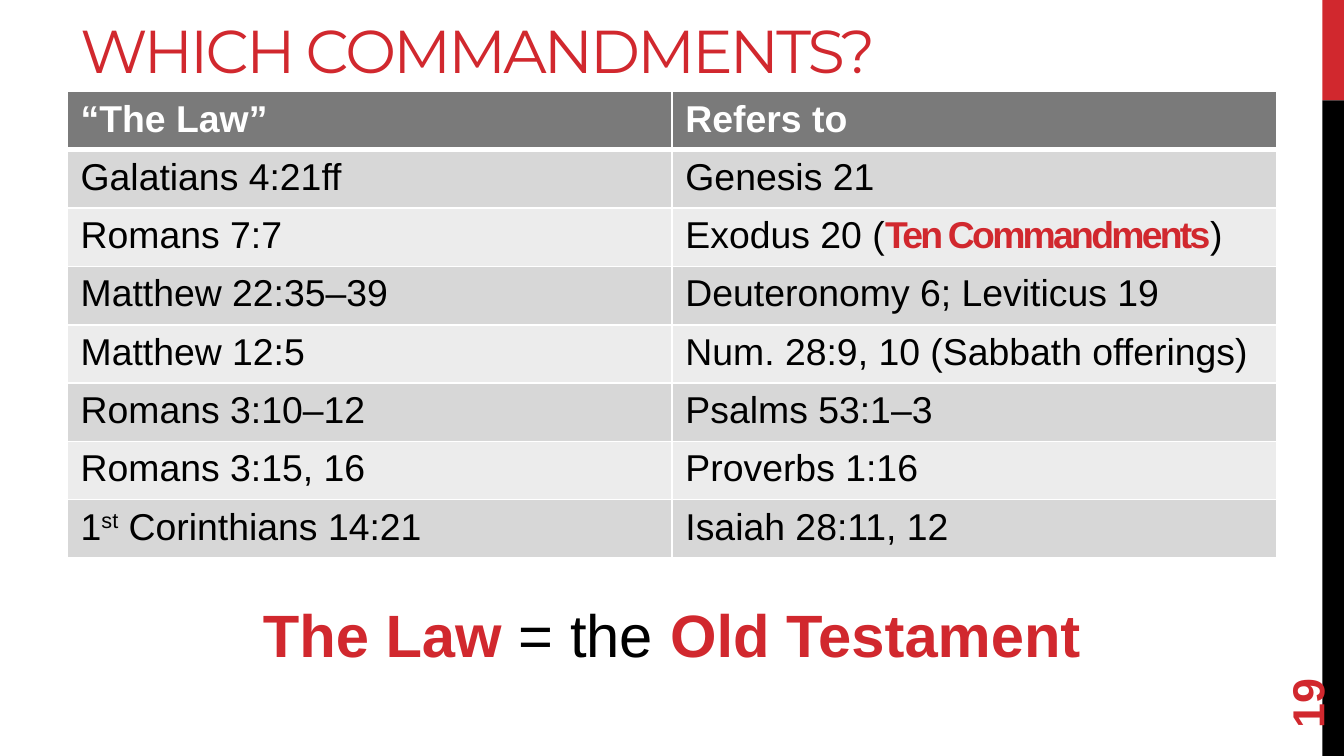
from lxml import etree
from pptx import Presentation
from pptx.dml.color import RGBColor
from pptx.enum import shapes, text
from pptx.oxml import ns
from pptx.util import Cm, Pt

THEME = dict(
    red="D1282E", black="000000", white="FFFFFF", head="7A7A7A",
    bands=("D7D7D7", "ECECEC"), title_font="Montserrat", font="Arial",
    title=32.4, cell=20, number=24, summary=32,
)
HOT = dict(bold=True, color=THEME["red"])

TITLE = "WHICH COMMANDMENTS?"
HEADER = ("“The Law”", "Refers to")
# A cell is plain text or a list of (text, format) runs.
ROWS = [
    ("Galatians 4:21ff", "Genesis 21"),
    ("Romans 7:7", [("Exodus 20 (", {}),
                    ("Ten Commandments", dict(HOT, spacing=-1.5)), (")", {})]),
    ("Matthew 22:35–39", "Deuteronomy 6; Leviticus 19"),
    ("Matthew 12:5", "Num.\u00a028:9, 10 (Sabbath offerings)"),
    ("Romans 3:10–12", "Psalms 53:1–3"),
    ("Romans 3:15, 16", "Proverbs 1:16"),
    ([("1", {}), ("st", dict(raised=30)), (" Corinthians 14:21", {})],
     "Isaiah 28:11, 12"),
]
SUMMARY = [("The Law ", HOT), ("= the ", {}), ("Old Testament", HOT)]
NUMBER = "19"

SLIDE_W, SLIDE_H = 25.4, 14.29
LEFT, WIDTH = 1.27, 22.86
TABLE_TOP, ROW_H = 1.73, 1.04
BAR_W, BAR_SPLIT = 0.41, 1.9


def rgb(key):
    return RGBColor.from_string(key)


def add_text(p, content, size, color=THEME["black"], font=THEME["font"],
             bold=False, spacing=0, raised=0):
    """Add one run; spacing is in points, raised in percent of the size."""
    r = p.add_run()
    r.text = content
    f = r.font
    f.name, f.size, f.bold = font, Pt(size), bold
    f.color.rgb = rgb(color)
    rPr = r._r.get_or_add_rPr()
    if spacing:
        rPr.set("spc", str(round(spacing * 100)))
    if raised:
        rPr.set("baseline", str(raised * 1000))


def add_runs(p, content, **base):
    for part, fmt in [(content, {})] if isinstance(content, str) else content:
        add_text(p, part, **{**base, **fmt})


def add_box(s, x, y, w, h, content, anchor=text.MSO_ANCHOR.TOP,
            align=text.PP_ALIGN.LEFT, **base):
    sp = s.shapes.add_textbox(Cm(x), Cm(y), Cm(w), Cm(h))
    tf = sp.text_frame
    tf.word_wrap = True
    tf.vertical_anchor = anchor
    tf.paragraphs[0].alignment = align
    add_runs(tf.paragraphs[0], content, **base)
    return sp


def add_bar(s, y, h, color):
    sp = s.shapes.add_shape(shapes.MSO_SHAPE.RECTANGLE, Cm(SLIDE_W - BAR_W),
                            Cm(y), Cm(BAR_W), Cm(h))
    sp.shadow.inherit = False
    sp.fill.solid()
    sp.fill.fore_color.rgb = rgb(color)
    sp.line.fill.background()


def set_borders(cell, top=1, bottom=1):
    """Draw white cell borders; widths are in points."""
    tcPr = cell._tc.get_or_add_tcPr()
    widths = dict(lnL=1, lnR=1, lnT=top, lnB=bottom)
    for i, (tag, width) in enumerate(widths.items()):
        ln = etree.Element(ns.qn("a:" + tag), w=str(Pt(width)))
        fill = etree.SubElement(ln, ns.qn("a:solidFill"))
        etree.SubElement(fill, ns.qn("a:srgbClr"), val=THEME["white"])
        tcPr.insert(i, ln)


def add_law_table(s):
    rows = [HEADER] + ROWS
    table = s.shapes.add_table(len(rows), len(HEADER), Cm(LEFT), Cm(TABLE_TOP),
                               Cm(WIDTH), Cm(ROW_H * len(rows))).table
    for i, row in enumerate(rows):
        table.rows[i].height = Cm(ROW_H)
        head = i == 0
        fill = THEME["head"] if head else THEME["bands"][(i - 1) % 2]
        for j, content in enumerate(row):
            cell = table.cell(i, j)
            cell.fill.solid()
            cell.fill.fore_color.rgb = rgb(fill)
            set_borders(cell, top=3 if i == 1 else 1, bottom=3 if head else 1)
            add_runs(cell.text_frame.paragraphs[0], content, size=THEME["cell"],
                     bold=head, color=THEME["white" if head else "black"])


def main():
    prs = Presentation()
    prs.slide_width, prs.slide_height = Cm(SLIDE_W), Cm(SLIDE_H)
    s = prs.slides.add_slide(prs.slide_layouts[6])

    add_bar(s, 0, BAR_SPLIT, THEME["red"])
    add_bar(s, BAR_SPLIT, SLIDE_H - BAR_SPLIT, THEME["black"])
    add_box(s, LEFT, 0.18, WIDTH, 1.52, TITLE, anchor=text.MSO_ANCHOR.MIDDLE,
            size=THEME["title"], font=THEME["title_font"],
            color=THEME["red"], spacing=-1.5)
    add_law_table(s)
    number = add_box(s, 23.32, 12.14, 2.74, 1.02, NUMBER,
                     anchor=text.MSO_ANCHOR.MIDDLE, size=THEME["number"], **HOT)
    number.rotation = 270
    add_box(s, LEFT, 11.18, WIDTH, 1.63, SUMMARY, align=text.PP_ALIGN.CENTER,
            size=THEME["summary"])
    prs.save("out.pptx")


if __name__ == "__main__":
    main()
